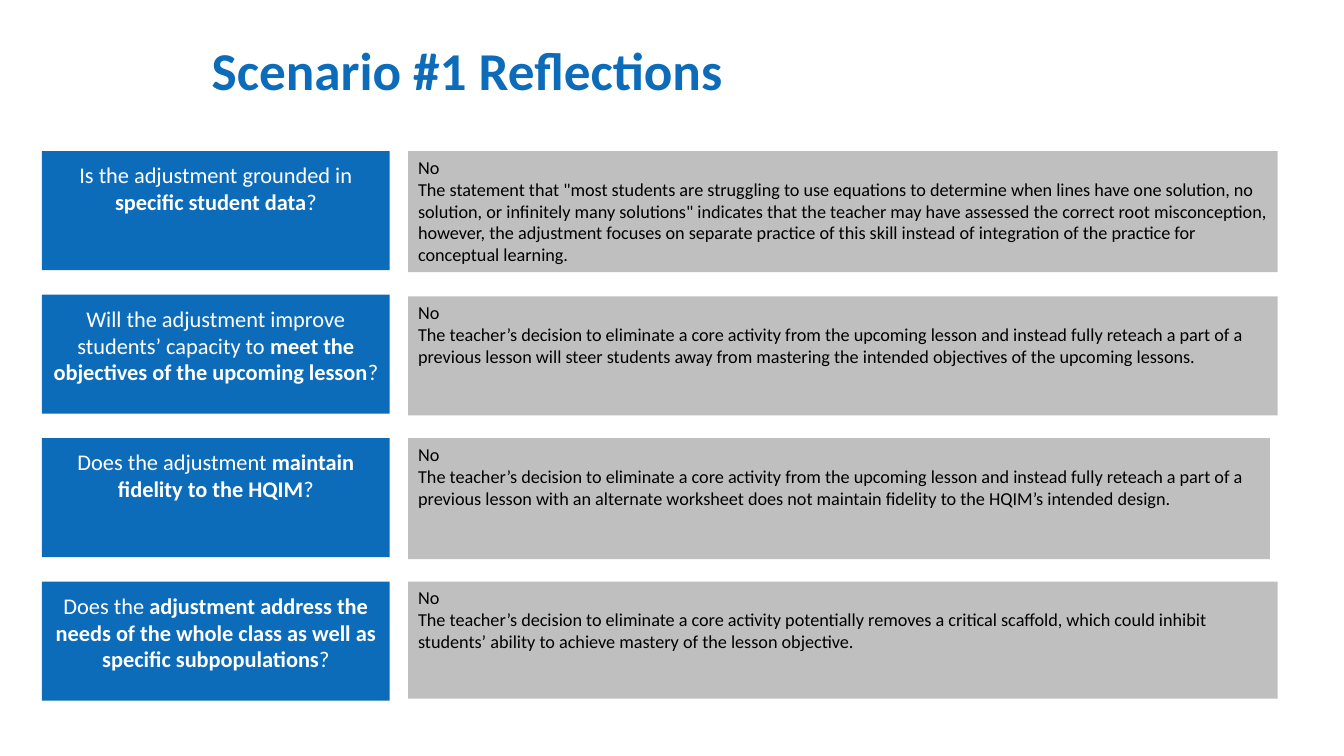
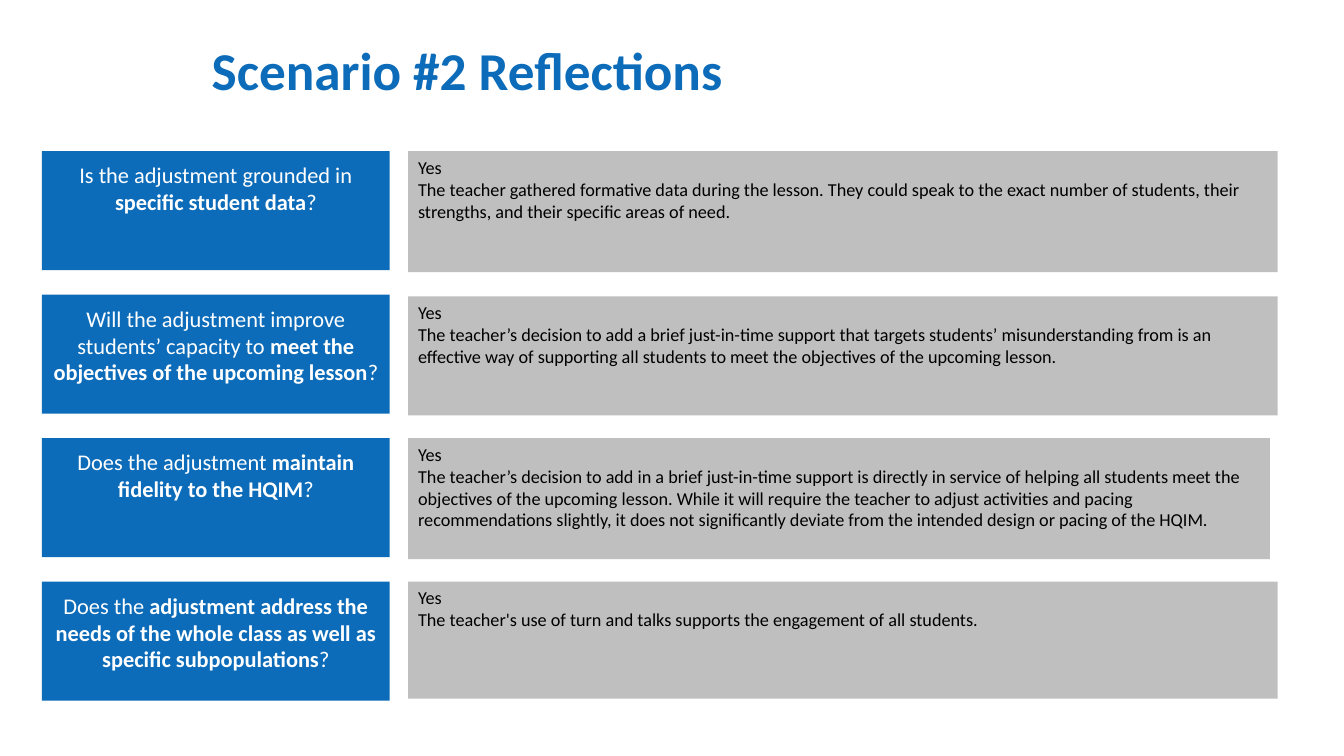
from dataclasses import dataclass

from pptx import Presentation
from pptx.dml.color import RGBColor
from pptx.enum.shapes import MSO_SHAPE
from pptx.enum.text import MSO_ANCHOR, MSO_AUTO_SIZE, PP_ALIGN
from pptx.util import Pt

# Shared look
FONT = "Calibri"
BLUE, GREY, WHITE, BLACK = "0D6CB9", "BFBFBF", "FFFFFF", "000000"
TITLE_LAYOUT = 5

# Shared grid, in points
FIRST_TOP, ROW_PITCH = 108, 102.5
QUESTION_LEFT, QUESTION_WIDTH, QUESTION_HEIGHT = 30, 248.4, 85
ANSWER_LEFT = 291.6


@dataclass(frozen=True)
class Row:
    """A question with its emphasised part, and the size of its answer panel."""
    lead: str
    focus: str
    answer_width: float
    answer_height: float
    answer_drop: float = 0


@dataclass(frozen=True)
class Scenario:
    title: str
    verdict: str
    reasons: tuple[str, ...]


ROWS = (
    Row("Is the adjustment grounded in ", "specific student data", 621, 86.4),
    Row("Will the adjustment improve students’ capacity to ",
        "meet the objectives of the upcoming lesson", 621, 85, 1.2),
    Row("Does the adjustment ", "maintain fidelity to the HQIM", 615.5, 86.4),
    Row("Does the ",
        "adjustment address the needs of the whole class as well as specific subpopulations",
        621, 83.5),
)

SCENARIOS = (
    Scenario("Scenario #1 Reflections", "No", (
        'The statement that "most students are struggling to use equations to determine when '
        'lines have one solution, no solution, or infinitely many solutions" indicates that the '
        "teacher may have assessed the correct root misconception, however, the adjustment "
        "focuses on separate practice of this skill instead of integration of the practice for "
        "conceptual learning.",
        "The teacher’s decision to eliminate a core activity from the upcoming lesson and instead "
        "fully reteach a part of a previous lesson will steer students away from mastering the "
        "intended objectives of the upcoming lessons.",
        "The teacher’s decision to eliminate a core activity from the upcoming lesson and instead "
        "fully reteach a part of a previous lesson with an alternate worksheet does not maintain "
        "fidelity to the HQIM’s intended design.",
        "The teacher’s decision to eliminate a core activity potentially removes a critical "
        "scaffold, which could inhibit students’ ability to achieve mastery of the lesson "
        "objective.",
    )),
    Scenario("Scenario #2 Reflections", "Yes", (
        "The teacher gathered formative data during the lesson. They could speak to the exact "
        "number of students, their strengths, and their specific areas of need.",
        "The teacher’s decision to add a brief just-in-time support that targets students’ "
        "misunderstanding from is an effective way of supporting all students to meet the "
        "objectives of the upcoming lesson.",
        "The teacher’s decision to add in a brief just-in-time support is directly in service of "
        "helping all students meet the objectives of the upcoming lesson. While it will require "
        "the teacher to adjust activities and pacing recommendations slightly, it does not "
        "significantly deviate from the intended design or pacing of the HQIM.",
        "The teacher's use of turn and talks supports the engagement of all students.",
    )),
)


def color(value: str) -> RGBColor:
    return RGBColor.from_string(value)


def style(paragraph, size: float, ink: str, align=PP_ALIGN.LEFT) -> None:
    paragraph.alignment = align
    paragraph.font.name = FONT
    paragraph.font.size = Pt(size)
    paragraph.font.color.rgb = color(ink)


def set_frame(frame, anchor, inset_y: float) -> None:
    frame.word_wrap = True
    frame.auto_size = MSO_AUTO_SIZE.NONE
    frame.vertical_anchor = anchor
    frame.margin_left = frame.margin_right = Pt(7.2)
    frame.margin_top = frame.margin_bottom = Pt(inset_y)


def add_title(slide, text: str) -> None:
    title = slide.shapes.title
    title.left, title.top, title.width, title.height = Pt(144), Pt(14.4), Pt(678), Pt(75.6)
    title.text_frame.text = text
    set_frame(title.text_frame, MSO_ANCHOR.MIDDLE, 3.6)
    heading = title.text_frame.paragraphs[0]
    style(heading, 38, BLUE)
    heading.font.bold = True
    heading.line_spacing = 0.9


def add_panel(slide, left: float, top: float, width: float, height: float,
              fill: str, inset_y: float):
    """Draw a flat rectangle and return its text frame."""
    panel = slide.shapes.add_shape(
        MSO_SHAPE.RECTANGLE, Pt(left), Pt(top), Pt(width), Pt(height))
    panel.shadow.inherit = False
    panel.fill.solid()
    panel.fill.fore_color.rgb = color(fill)
    panel.line.fill.background()
    set_frame(panel.text_frame, MSO_ANCHOR.TOP, inset_y)
    return panel.text_frame


def add_question(slide, row: Row, top: float) -> None:
    frame = add_panel(slide, QUESTION_LEFT, top, QUESTION_WIDTH, QUESTION_HEIGHT, BLUE, 7.2)
    question = frame.paragraphs[0]
    style(question, 16, WHITE, PP_ALIGN.CENTER)
    for text, bold in ((row.lead, False), (row.focus, True), ("?", False)):
        run = question.add_run()
        run.text = text
        run.font.bold = bold


def add_answer(slide, row: Row, top: float, verdict: str, reason: str) -> None:
    frame = add_panel(slide, ANSWER_LEFT, top + row.answer_drop,
                      row.answer_width, row.answer_height, GREY, 3.6)
    frame.text = f"{verdict}\n{reason}"
    for paragraph in frame.paragraphs:
        style(paragraph, 13, BLACK)


def add_scenario(deck, scenario: Scenario) -> None:
    slide = deck.slides.add_slide(deck.slide_layouts[TITLE_LAYOUT])
    add_title(slide, scenario.title)
    for index, (row, reason) in enumerate(zip(ROWS, scenario.reasons)):
        top = FIRST_TOP + index * ROW_PITCH
        add_answer(slide, row, top, scenario.verdict, reason)
        add_question(slide, row, top)


def main() -> None:
    deck = Presentation()
    deck.slide_width, deck.slide_height = Pt(960), Pt(540)
    for scenario in SCENARIOS:
        add_scenario(deck, scenario)
    deck.save("out.pptx")


if __name__ == "__main__":
    main()
